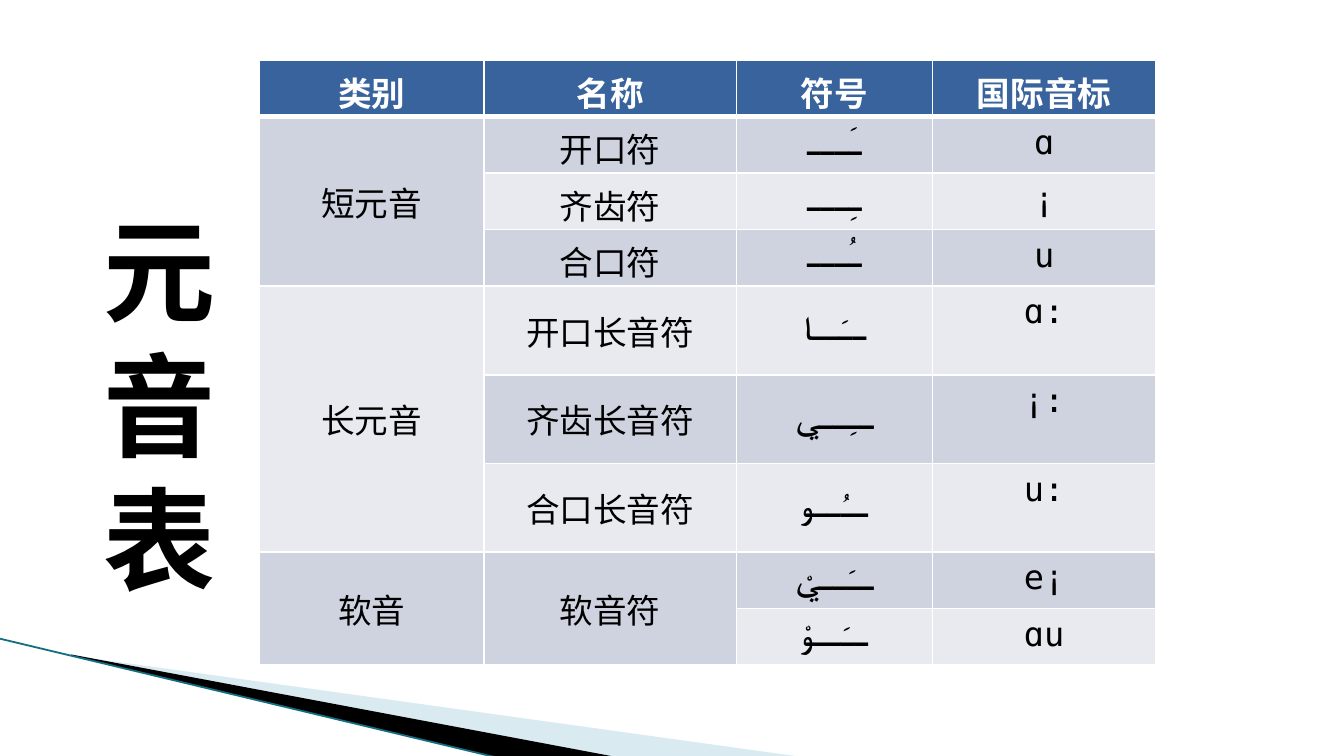
from lxml.etree import SubElement
from pptx import Presentation
from pptx.dml.color import RGBColor
from pptx.enum.shapes import MSO_CONNECTOR
from pptx.enum.text import MSO_ANCHOR, MSO_AUTO_SIZE, PP_ALIGN
from pptx.oxml.ns import qn
from pptx.util import Inches, Pt

BLACK = RGBColor(0x00, 0x00, 0x00)
WHITE = RGBColor(0xFF, 0xFF, 0xFF)
HEADER_BLUE = RGBColor(0x39, 0x63, 0x9D)
BAND_DARK = RGBColor(0xCE, 0xD3, 0xDF)
BAND_LIGHT = RGBColor(0xE8, 0xEA, 0xEF)
PALE_BLUE = RGBColor(0xA0, 0xCB, 0xDC)
TEAL = RGBColor(0x14, 0x6E, 0x82)

HEADING_FONT = "Noto Sans CJK SC"
BODY_FONT = "Noto Sans CJK JP"
ARABIC_FONT = "Lato"
PHONETIC_FONT = "DejaVu Sans Mono"

COLUMN_WIDTHS = [1.67, 1.88, 1.46, 1.66]
ROW_HEIGHTS = [0.42] * 4 + [0.66] * 3 + [0.42] * 2
SYMBOL_COLUMN, PHONETIC_COLUMN = 2, 3
VOWELS = [
    ["类别", "名称", "符号", "国际音标"],
    ["短元音", "开口符", "ــَــ", "ɑ"],
    ["", "齐齿符", "ــِــ", "¡"],
    ["", "合口符", "ــُــ", "u"],
    ["长元音", "开口长音符", "ــَــا", "ɑ:"],
    ["", "齐齿长音符", "ــِــي", "¡:"],
    ["", "合口长音符", "ــُــو", "u:"],
    ["软音", "软音符", "ــَــيْ", "e¡"],
    ["", "", "ــَــوْ", "ɑu"],
]
MERGES = [(1, 3, 0), (4, 6, 0), (7, 8, 0), (7, 8, 1)]


def write_text(frame, text, *, font, size=18, color=BLACK, bold=False,
               align=PP_ALIGN.CENTER, rtl=False):
    paragraph = frame.paragraphs[0]
    paragraph.alignment = align
    if rtl:
        paragraph._p.get_or_add_pPr().set("rtl", "1")
    run = paragraph.add_run()
    run.text = text
    run.font.name = font
    run.font.size = Pt(size)
    run.font.bold = bold
    run.font.color.rgb = color
    if not rtl:
        SubElement(run._r.get_or_add_rPr(), qn("a:ea")).set("typeface", font)


def add_wedge(slide, points, color, opacity=100):
    corners = [(Inches(x), Inches(y)) for x, y in points]
    builder = slide.shapes.build_freeform(*corners[0])
    builder.add_line_segments(corners[1:], close=True)
    wedge = builder.convert_to_shape()
    wedge.shadow.inherit = False
    wedge.fill.solid()
    wedge.fill.fore_color.rgb = color
    wedge.line.fill.background()
    if opacity < 100:
        tint = wedge._element.spPr.find(qn("a:solidFill"))[0]
        SubElement(tint, qn("a:alpha")).set("val", str(opacity * 1000))


def add_edge_line(slide, start, end):
    edge = slide.shapes.add_connector(
        MSO_CONNECTOR.STRAIGHT, *map(Inches, start + end))
    edge.line.color.rgb = TEAL
    edge.line.width = Pt(0.95)
    SubElement(edge._element.spPr, qn("a:effectLst"))


def set_borders(cell, row):
    widths = {"a:lnL": 1, "a:lnR": 1,
              "a:lnT": 3 if row == 1 else 1,
              "a:lnB": 3 if row == 0 else 1}
    properties = cell._tc.get_or_add_tcPr()
    for side, width in widths.items():
        border = SubElement(properties, qn(side), w=str(Pt(width)))
        fill = SubElement(border, qn("a:solidFill"))
        SubElement(fill, qn("a:srgbClr")).set("val", str(WHITE))


def text_format(row, column):
    if row == 0:
        return {"font": HEADING_FONT, "color": WHITE, "bold": True}
    if column == SYMBOL_COLUMN:
        return {"font": ARABIC_FONT, "bold": True, "rtl": True}
    return {"font": PHONETIC_FONT if column == PHONETIC_COLUMN else BODY_FONT}


def fill_cell(cell, text, row, column):
    set_borders(cell, row)
    cell.fill.solid()
    band = BAND_DARK if row % 2 else BAND_LIGHT
    cell.fill.fore_color.rgb = band if row else HEADER_BLUE
    cell.margin_left = cell.margin_right = Inches(0.1)
    cell.margin_top = cell.margin_bottom = Inches(0.05)
    top = row and column == PHONETIC_COLUMN
    cell.vertical_anchor = MSO_ANCHOR.TOP if top else MSO_ANCHOR.MIDDLE
    if text:
        write_text(cell.text_frame, text, **text_format(row, column))


def add_vowel_table(slide):
    table = slide.shapes.add_table(
        len(ROW_HEIGHTS), len(COLUMN_WIDTHS), Inches(1.93), Inches(0.45),
        Inches(sum(COLUMN_WIDTHS)), Inches(sum(ROW_HEIGHTS))).table
    for column, width in zip(table.columns, COLUMN_WIDTHS):
        column.width = Inches(width)
    for row, height in zip(table.rows, ROW_HEIGHTS):
        row.height = Inches(height)
    for row, entries in enumerate(VOWELS):
        for column, text in enumerate(entries):
            fill_cell(table.cell(row, column), text, row, column)
    for first, last, column in MERGES:
        table.cell(first, column).merge(table.cell(last, column))


def set_title(slide, text):
    title = slide.shapes.title
    title.left, title.top = Inches(0.67), Inches(1.45)
    title.width, title.height = Inches(1.02), Inches(3.13)
    frame = title.text_frame
    frame.word_wrap = True
    frame.auto_size = MSO_AUTO_SIZE.SHAPE_TO_FIT_TEXT
    frame.vertical_anchor = MSO_ANCHOR.TOP
    write_text(frame, text, font=HEADING_FONT, size=60, bold=True,
               align=PP_ALIGN.LEFT)


def main():
    presentation = Presentation()
    presentation.slide_width = Inches(10)
    presentation.slide_height = Inches(10) * 9 // 16
    slide = presentation.slides.add_slide(presentation.slide_layouts[5])
    add_wedge(slide, [(0.55, 4.88), (5.95, 5.63), (4.56, 5.63)], PALE_BLUE,
              opacity=40)
    add_wedge(slide, [(0.53, 4.87), (4.57, 5.63), (3.72, 5.64), (0.54, 4.88)],
              BLACK)
    add_edge_line(slide, (-0.01, 4.75), (3.71, 5.64))
    add_vowel_table(slide)
    set_title(slide, "元音表")
    presentation.save("out.pptx")


if __name__ == "__main__":
    main()
